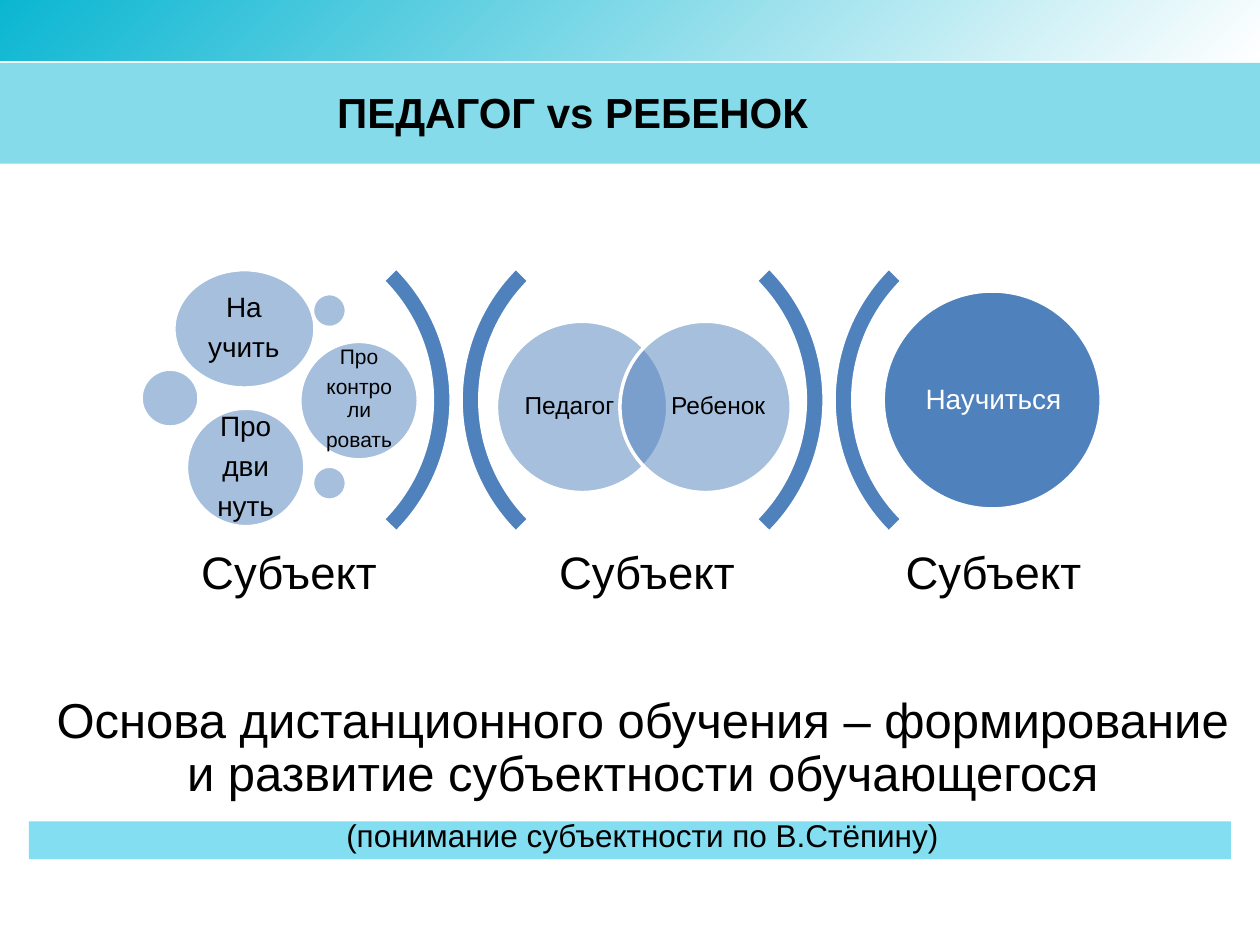
from pptx import Presentation
from pptx.dml.color import RGBColor
from pptx.enum.shapes import MSO_SHAPE
from pptx.enum.text import MSO_ANCHOR, PP_ALIGN
from pptx.oxml.ns import qn
from pptx.util import Inches, Pt
from lxml.etree import SubElement

BLACK = RGBColor(0x00, 0x00, 0x00)
WHITE = RGBColor(0xFF, 0xFF, 0xFF)
BLUE = RGBColor(0x4F, 0x81, 0xBD)
TEAL = RGBColor(0x0B, 0xB6, 0xD2)
TITLE_BAND = RGBColor(0x85, 0xDB, 0xE9)
NOTE_BAND = RGBColor(0x82, 0xDE, 0xF0)

presentation = Presentation()
presentation.slide_width = Inches(10)
presentation.slide_height = Inches(7.5)
slide = presentation.slides.add_slide(presentation.slide_layouts[6])


def add_figure(kind, left, top, width, height, color, outlined=True, alpha=100):
    figure = slide.shapes.add_shape(
        kind, Inches(left), Inches(top), Inches(width), Inches(height))
    figure.shadow.inherit = False
    figure.fill.solid()
    figure.fill.fore_color.rgb = color
    if alpha < 100:
        color_node = figure.fill._xPr.find(qn("a:solidFill"))[0]
        SubElement(color_node, qn("a:alpha")).set("val", str(alpha * 1000))
    if outlined:
        figure.line.color.rgb = WHITE
        figure.line.width = Pt(2)
    else:
        figure.line.fill.background()
    return figure


def add_text(text, left, top, width, height, sizes, inset, color=BLACK,
             anchor=MSO_ANCHOR.MIDDLE, before=0, after=0.35):
    box = slide.shapes.add_textbox(
        Inches(left), Inches(top), Inches(width), Inches(height))
    frame = box.text_frame
    frame.word_wrap = True
    frame.vertical_anchor = anchor
    frame.margin_left = frame.margin_right = Inches(inset)
    frame.margin_top = frame.margin_bottom = Inches(inset)
    frame.text = text
    for index, paragraph in enumerate(frame.paragraphs):
        size = sizes[min(index, len(sizes) - 1)]
        paragraph.alignment = PP_ALIGN.CENTER
        paragraph.line_spacing = 0.9
        paragraph.space_before = Pt(before if index else 0)
        paragraph.space_after = Pt(size * after)
        paragraph.font.name = "Arial"
        paragraph.font.size = Pt(size)
        paragraph.font.color.rgb = color
    return frame


# Header and note bands
header = add_figure(MSO_SHAPE.RECTANGLE, 0, -0.02, 10, 0.5, TEAL, outlined=False)
header.fill.gradient()
header.fill.gradient_angle = 315
for stop, color, position in zip(header.fill.gradient_stops, (TEAL, WHITE), (0, 1)):
    stop.color.rgb = color
    stop.position = position
add_figure(MSO_SHAPE.RECTANGLE, 0, 0.5, 10, 0.8, TITLE_BAND, outlined=False)
add_figure(MSO_SHAPE.RECTANGLE, 0.23, 6.52, 9.54, 0.3, NOTE_BAND, outlined=False)

# Brackets between the three groups
for left, rotation in ((0.61, 90), (3.66, 270), (3.57, 90), (6.62, 270)):
    bracket = add_figure(MSO_SHAPE.BLOCK_ARC, left, 1.69, 2.97, 2.97, BLUE)
    bracket.rotation = rotation
    for index, value in enumerate((135, 189, 0.05)):
        bracket.adjustments[index] = value

# Group captions
for left in (1.17, 4.01, 6.76):
    add_text("Субъект", left, 4.27, 2.25, 0.59, [26], 0.11)

# Teacher and child: overlapping circles
for left in (3.94, 4.92):
    add_figure(MSO_SHAPE.OVAL, left, 2.55, 1.36, 1.36, BLUE, alpha=50)
for role, left in (("Педагог", 4.13), ("Ребенок", 5.31)):
    add_text(role, left, 2.71, 0.78, 1.04, [14], 0)

# Teacher's actions: bubbles
for left, top, width, height in (
        (1.38, 2.14, 1.12, 0.94), (1.12, 2.93, 0.46, 0.46),
        (2.48, 2.33, 0.27, 0.27), (2.38, 2.71, 0.94, 0.94),
        (2.48, 3.7, 0.27, 0.27), (1.48, 3.24, 0.94, 0.94)):
    add_figure(MSO_SHAPE.OVAL, left, top, width, height, BLUE, alpha=50)
for action, left, top, width, size, inset in (
        ("На\nучить", 1.54, 2.28, 0.79, 16, 0.07),
        ("Про\nконтроли\nровать", 2.52, 2.84, 0.66, 12, 0.05),
        ("Про\nдви\nнуть", 1.62, 3.38, 0.66, 16, 0.07)):
    add_text(action, left, top, width, 0.66, [size], inset)

# Child's action
add_figure(MSO_SHAPE.OVAL, 7.01, 2.31, 1.73, 1.73, BLUE)
add_text("Научиться", 7.27, 2.56, 1.23, 1.23, [16], 0.07, color=WHITE)

# Conclusion
add_text("Основа дистанционного обучения – формирование и развитие "
         "субъектности обучающегося\n(понимание субъектности по В.Стёпину)",
         0.33, 5.48, 9.54, 1.86, [28, 18], 0.05,
         anchor=MSO_ANCHOR.TOP, before=10, after=0)

# Title
title = add_text("ПЕДАГОГ vs РЕБЕНОК", 0, 0.52, 9.09, 0.79, [24], 0.1, after=0)
title.paragraphs[0].font.bold = True

presentation.save("out.pptx")
